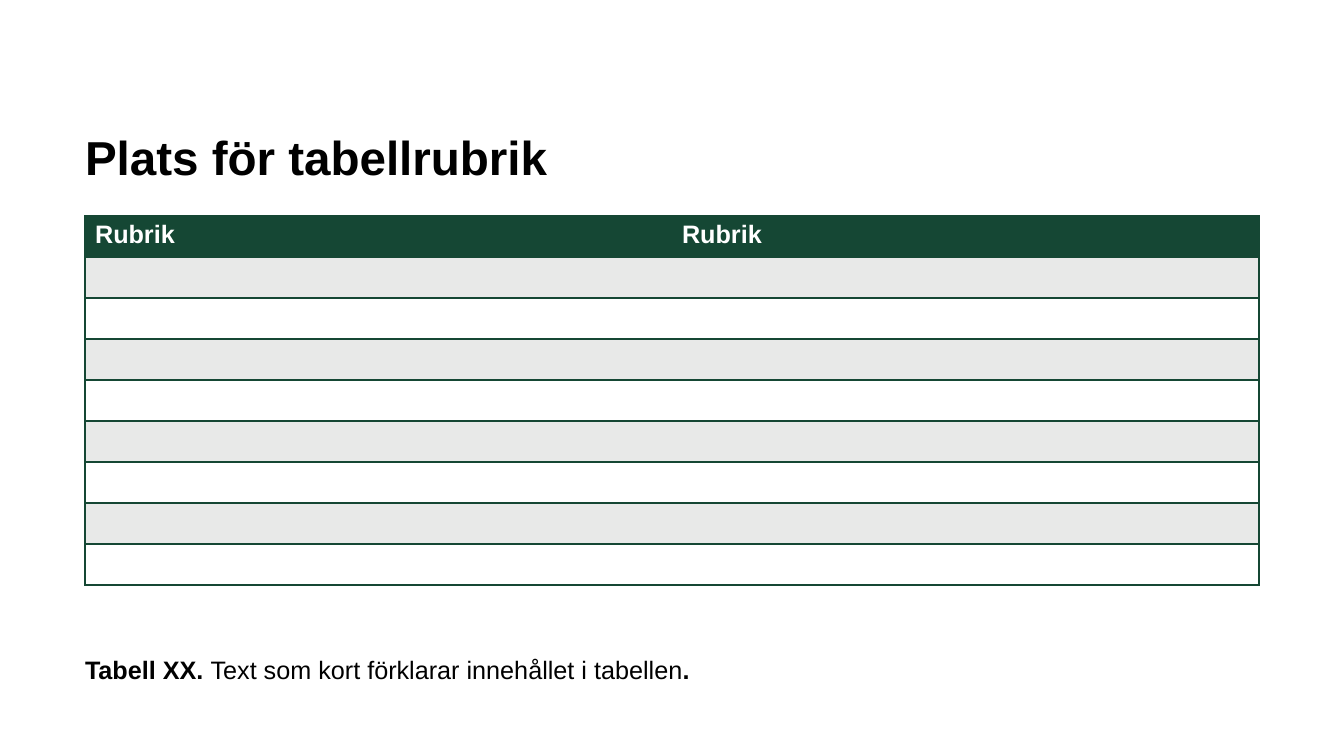
from dataclasses import dataclass

from lxml import etree
from pptx import Presentation
from pptx.dml.color import RGBColor
from pptx.enum.text import MSO_ANCHOR
from pptx.oxml.ns import qn
from pptx.util import Pt

EMU_PER_INCH = 914400
PX_PER_INCH = 100.8
SLIDE_WIDTH, SLIDE_HEIGHT = 1344, 756
LEFT = 85
COLUMN_WIDTH, ROW_HEIGHT = 587, 41
CONTENT_WIDTH = 2 * COLUMN_WIDTH
TABLE_TOP = 216
BODY_ROWS = 8
HEADINGS = ("Rubrik", "Rubrik")
FONT = "Arial"
BORDER_WIDTH = Pt(1)
BOTTOM = MSO_ANCHOR.BOTTOM
MIDDLE = MSO_ANCHOR.MIDDLE
COLORS = {
    "text": "000000",
    "green": "154734",
    "band": "E8E9E8",
    "white": "FFFFFF",
}


@dataclass(frozen=True)
class Phrase:
    text: str
    bold: bool


@dataclass(frozen=True)
class TextBlock:
    top: int
    height: int
    size: int
    anchor: MSO_ANCHOR
    phrases: tuple[Phrase, ...]
    line_spacing: int | None = None


TEXT_BLOCKS = (
    TextBlock(135, 50, 34, BOTTOM, (Phrase("Plats för tabellrubrik", True),), 36),
    TextBlock(
        638,
        62,
        18,
        MIDDLE,
        (
            Phrase("Tabell XX. ", True),
            Phrase("Text som kort förklarar innehållet i tabellen", False),
            Phrase(".", True),
        ),
    ),
)


def px(length: int) -> int:
    return round(length * EMU_PER_INCH / PX_PER_INCH)


def color(name: str) -> RGBColor:
    return RGBColor.from_string(COLORS[name])


def style_font(font, size: int, bold: bool, color_name: str) -> None:
    font.name = FONT
    font.size = Pt(size)
    font.bold = bold
    font.color.rgb = color(color_name)


def draw_text(slide, block: TextBlock) -> None:
    box = slide.shapes.add_textbox(
        px(LEFT), px(block.top), px(CONTENT_WIDTH), px(block.height)
    )
    frame = box.text_frame
    frame.word_wrap = True
    frame.vertical_anchor = block.anchor
    frame.margin_left = frame.margin_right = 0
    frame.margin_top = frame.margin_bottom = 0
    paragraph = frame.paragraphs[0]
    if block.line_spacing:
        paragraph.line_spacing = Pt(block.line_spacing)
    for phrase in block.phrases:
        run = paragraph.add_run()
        run.text = phrase.text
        style_font(run.font, block.size, phrase.bold, "text")


def set_borders(cell, first: bool, last: bool) -> None:
    sides = {"a:lnL": first, "a:lnR": last, "a:lnT": True, "a:lnB": True}
    properties = cell._tc.get_or_add_tcPr()
    for position, (tag, visible) in enumerate(sides.items()):
        line = etree.Element(qn(tag), w=str(BORDER_WIDTH))
        if visible:
            fill = etree.SubElement(line, qn("a:solidFill"))
            etree.SubElement(fill, qn("a:srgbClr"), val=COLORS["green"])
        else:
            etree.SubElement(line, qn("a:noFill"))
        properties.insert(position, line)


def row_color(row_number: int) -> str:
    if row_number == 0:
        return "green"
    return "band" if row_number % 2 else "white"


def draw_table(slide) -> None:
    row_count = BODY_ROWS + 1
    table = slide.shapes.add_table(
        row_count,
        len(HEADINGS),
        px(LEFT),
        px(TABLE_TOP),
        px(CONTENT_WIDTH),
        px(row_count * ROW_HEIGHT),
    ).table
    table.horz_banding = False
    for column in table.columns:
        column.width = px(COLUMN_WIDTH)
    for row_number, row in enumerate(table.rows):
        row.height = px(ROW_HEIGHT)
        for column_number, cell in enumerate(row.cells):
            cell.fill.solid()
            cell.fill.fore_color.rgb = color(row_color(row_number))
            set_borders(
                cell, column_number == 0, column_number == len(HEADINGS) - 1
            )
    for cell, heading in zip(table.rows[0].cells, HEADINGS):
        cell.text_frame.text = heading
        style_font(cell.text_frame.paragraphs[0].runs[0].font, 18, True, "white")


def main() -> None:
    presentation = Presentation()
    presentation.slide_width = px(SLIDE_WIDTH)
    presentation.slide_height = px(SLIDE_HEIGHT)
    slide = presentation.slides.add_slide(presentation.slide_layouts[6])
    for block in TEXT_BLOCKS:
        draw_text(slide, block)
    draw_table(slide)
    presentation.save("out.pptx")


if __name__ == "__main__":
    main()
